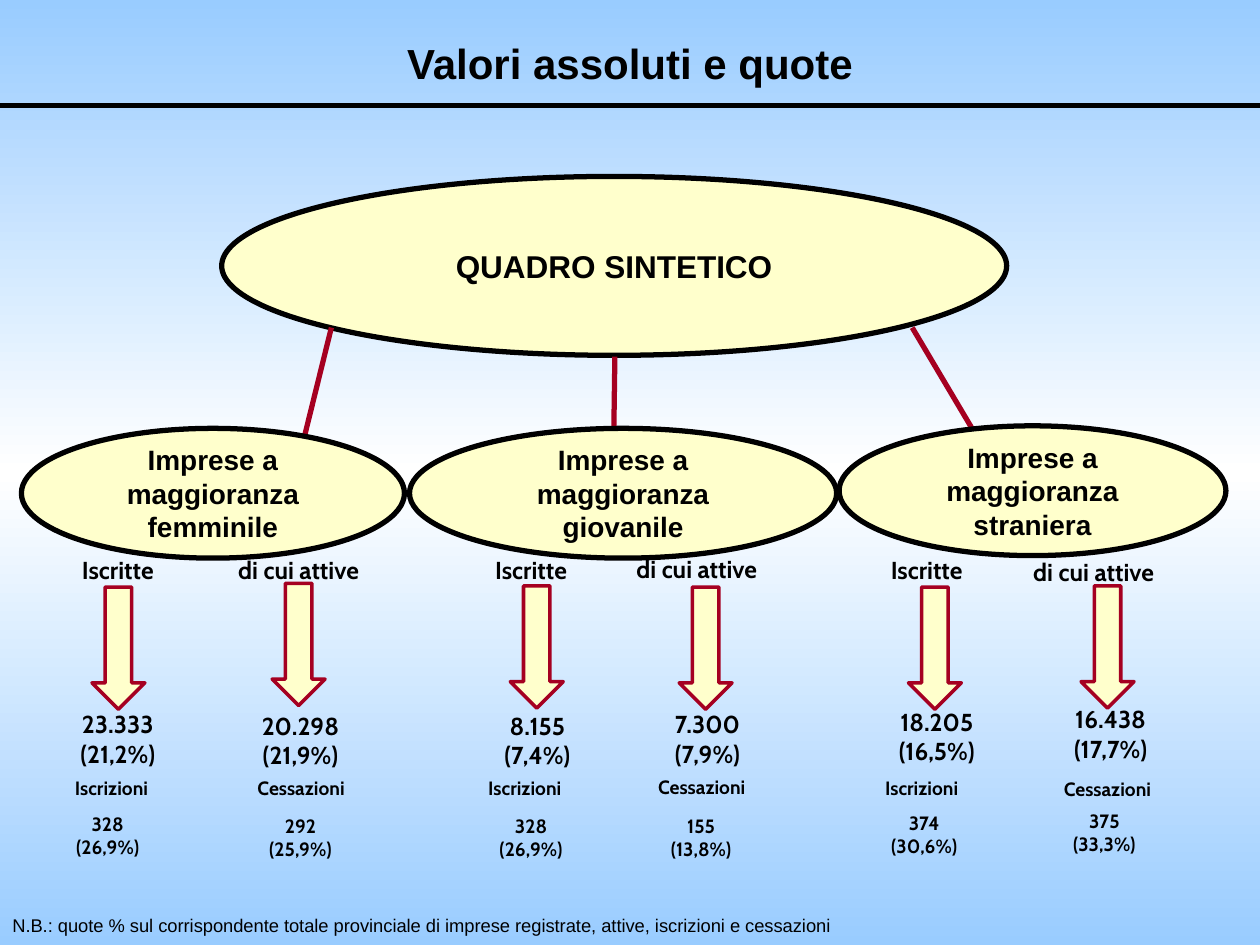
from copy import deepcopy

from pptx import Presentation
from pptx.dml.color import RGBColor
from pptx.enum.shapes import MSO_CONNECTOR, MSO_SHAPE
from pptx.enum.text import MSO_ANCHOR, MSO_AUTO_SIZE, PP_ALIGN
from pptx.oxml.ns import qn
from pptx.oxml.xmlchemy import OxmlElement
from pptx.util import Inches, Pt

COLORS = {"sky": "99CCFF", "white": "FFFFFF", "cream": "FFFFCC",
          "red": "A50021", "black": "000000"}

TITLE = "Valori assoluti e quote"
NOTE = ("N.B.: quote % sul corrispondente totale provinciale di imprese "
        "registrate, attive, iscrizioni e cessazioni")

ROOT = ("QUADRO SINTETICO", (1.76, 1.4, 6.23, 1.42))
BRANCHES = [
    ("Imprese a maggioranza femminile", (0.17, 3.4, 3.04, 1.03)),
    ("Imprese a maggioranza giovanile", (3.25, 3.4, 3.39, 1.03)),
    ("Imprese a maggioranza straniera", (6.66, 3.38, 3.07, 1.03)),
]
LINKS = [((2.63, 2.6), (2.19, 4.38)),
         ((4.88, 2.83), (4.86, 4.25)),
         ((7.24, 2.6), (8.29, 4.37))]

# Stock and flow labels alternate: registered / active, openings / closures
STOCK_LABELS = ["Iscritte", "di cui attive"]
FLOW_LABELS = ["Iscrizioni", "Cessazioni"]
LABEL_WIDTHS = [1.29, 1.38]
STOCKS = [("23.333", "(21,2%)"), ("20.298", "(21,9%)"), ("8.155", "(7,4%)"),
          ("7.300", "(7,9%)"), ("18.205", "(16,5%)"), ("16.438", "(17,7%)")]
FLOWS = [("328", "(26,9%)"), ("292", "(25,9%)"), ("328", "(26,9%)"),
         ("155", "(13,8%)"), ("374", "(30,6%)"), ("375", "(33,3%)")]

# Left and top of each part, one entry per column
STOCK_LABEL_AT = [(0.29, 4.36), (1.68, 4.36), (3.57, 4.36),
                  (4.84, 4.35), (6.71, 4.36), (7.99, 4.37)]
ARROW_AT = [(0.73, 4.66), (2.16, 4.63), (4.05, 4.65),
            (5.39, 4.66), (7.21, 4.66), (8.58, 4.65)]
STOCK_AT = [(0.31, 5.58), (1.76, 5.59), (3.66, 5.59),
            (5.01, 5.58), (6.83, 5.56), (8.21, 5.54)]
FLOW_LABEL_AT = [(0.24, 6.11), (1.7, 6.11), (3.52, 6.11),
                 (4.88, 6.1), (6.67, 6.11), (8.1, 6.12)]
FLOW_AT = [(0.23, 6.4), (1.76, 6.41), (3.61, 6.41),
           (4.96, 6.41), (6.73, 6.39), (8.16, 6.37)]


def color(name):
    return RGBColor.from_string(COLORS[name])


def inches(values):
    return [Inches(value) for value in values]


def write(frame, lines, size, font="Arial", bold=True, align=PP_ALIGN.CENTER):
    frame.word_wrap = True
    for index, line in enumerate(lines):
        paragraph = frame.add_paragraph() if index else frame.paragraphs[0]
        paragraph.alignment = align
        run = paragraph.add_run()
        run.text = line
        run.font.name = font
        run.font.size = Pt(size)
        run.font.bold = bold
        run.font.color.rgb = color("black")


def add_text(slide, box, lines, size, **style):
    frame = slide.shapes.add_textbox(*inches(box)).text_frame
    write(frame, lines, size, **style)
    frame.auto_size = MSO_AUTO_SIZE.SHAPE_TO_FIT_TEXT


def add_filled(slide, kind, box, line_color, line_width):
    shape = slide.shapes.add_shape(kind, *inches(box))
    shape.shadow.inherit = False
    shape.fill.solid()
    shape.fill.fore_color.rgb = color("cream")
    shape.line.color.rgb = color(line_color)
    shape.line.width = Pt(line_width)
    return shape


def add_bubble(slide, label, box, size):
    bubble = add_filled(slide, MSO_SHAPE.OVAL, box, "black", 3)
    bubble.text_frame.vertical_anchor = MSO_ANCHOR.MIDDLE
    write(bubble.text_frame, [label], size)


def add_line(slide, start, end, line_color, arrow=False):
    line = slide.shapes.add_connector(MSO_CONNECTOR.STRAIGHT,
                                      *inches(start + end))
    line.line.color.rgb = color(line_color)
    line.line.width = Pt(3)
    if arrow:
        head = OxmlElement("a:tailEnd")
        head.set("type", "arrow")
        line.line._get_or_add_ln().append(head)
    line._element.spPr.append(OxmlElement("a:effectLst"))


def paint_background(slide):
    """Vertical gradient: sky, white in the middle, sky."""
    fill = slide.background.fill
    fill.gradient()
    stop_list = slide._element.find(".//" + qn("a:gsLst"))
    stop_list.append(deepcopy(stop_list[-1]))
    for stop, position, name in zip(fill.gradient_stops, (0, 0.5, 1),
                                    ("sky", "white", "sky")):
        stop.position = position
        stop.color.rgb = color(name)
    fill.gradient_angle = 270


def add_column(slide, index):
    kind = index % 2
    label_width = LABEL_WIDTHS[kind]
    value_width = 1.25 if index < 2 else 1.21
    parts = [
        (STOCK_LABEL_AT, label_width, 0.34, [STOCK_LABELS[kind]], 14),
        (STOCK_AT, value_width, 0.57, STOCKS[index], 14),
        (FLOW_LABEL_AT, label_width, 0.29, [FLOW_LABELS[kind]], 11),
        (FLOW_AT, value_width, 0.47, FLOWS[index], 11),
    ]
    for places, width, height, lines, size in parts:
        add_text(slide, places[index] + (width, height), lines, size,
                 font="Cabin")
    add_filled(slide, MSO_SHAPE.DOWN_ARROW, ARROW_AT[index] + (0.42, 0.97),
               "red", 2)


def main():
    deck = Presentation()
    deck.slide_width, deck.slide_height = Inches(10), Inches(7.5)
    slide = deck.slides.add_slide(deck.slide_layouts[5])
    paint_background(slide)

    title = slide.shapes.title
    title.left, title.top, title.width, title.height = inches((0, 0.21, 10, 0.58))
    title.text_frame.vertical_anchor = MSO_ANCHOR.MIDDLE
    write(title.text_frame, [TITLE], 24)
    add_line(slide, (0, 0.84), (10, 0.84), "black")

    add_bubble(slide, *ROOT, 18)
    for start, end in LINKS:
        add_line(slide, start, end, "red", arrow=True)
    for label, box in BRANCHES:
        add_bubble(slide, label, box, 16)
    for index in range(len(STOCKS)):
        add_column(slide, index)

    add_text(slide, (0, 7.21, 7.21, 0.28), [NOTE], 10.5, bold=False,
             align=PP_ALIGN.LEFT)
    deck.save("out.pptx")


if __name__ == "__main__":
    main()
